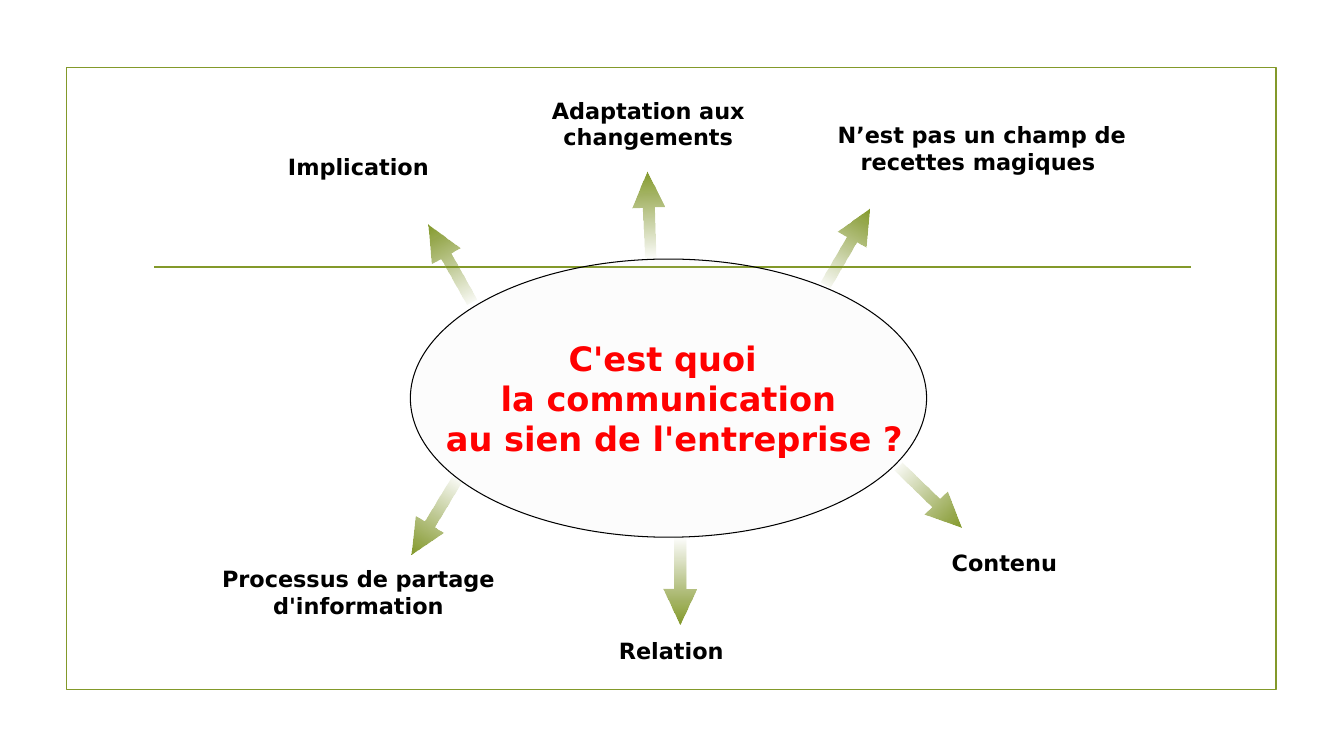
from dataclasses import dataclass

from lxml import etree
from pptx import Presentation
from pptx.dml.color import RGBColor
from pptx.enum import shapes, text
from pptx.oxml import ns
from pptx.util import Emu, Pt

PX = 9144  # 100 px to the inch


@dataclass(frozen=True)
class Theme:
    font: str = "DejaVu Sans"
    olive: str = "83992A"
    dark_olive: str = "7D9128"
    grey: str = "DADADA"
    black: str = "000000"
    red: str = "FF0000"
    title_size: int = 24
    label_size: int = 16
    rule_width: float = 1.25
    outline_width: float = 0.75


THEME = Theme()
CENTER, LEFT = text.PP_ALIGN.CENTER, text.PP_ALIGN.LEFT
ARROW_SIZE = (87, 32)

# left, top, rotation
ARROWS = [
    (797, 229, 299.6),
    (600, 198, 267.9),
    (403, 245, 240.9),
    (879, 477, 44.1),
    (631, 560, 90),
    (387, 497, 120.8),
]

# wording, left, top, width, height, alignment
LABELS = [
    ("Processus de partage d'information", 210, 556, 291, 64, CENTER),
    ("Relation", 604, 627, 220, 37, LEFT),
    ("Implication", 210, 147, 291, 37, CENTER),
    ("Adaptation aux changements", 533, 91, 220, 64, CENTER),
    ("Contenu", 934, 540, 149, 37, LEFT),
    (" N’est pas un champ de recettes magiques", 793, 115, 354, 64, CENTER),
]

TOPIC = ["C'est quoi ", "la communication", " au sien de l'entreprise ?"]


def px(*lengths):
    return [Emu(length * PX) for length in lengths]


def rgb(colour):
    return RGBColor.from_string(colour)


def set_alpha(colour_parent, percent):
    colour = colour_parent.find(".//" + ns.qn("a:srgbClr"))
    etree.SubElement(colour, ns.qn("a:alpha"), val=str(percent * 1000))


def set_line(line, colour, width):
    line.color.rgb = rgb(colour)
    line.width = Pt(width)


def add_span(para, wording, size, colour):
    span = para.add_run()
    span.text = wording
    span.font.name = THEME.font
    span.font.size = Pt(size)
    span.font.bold = True
    span.font.color.rgb = rgb(colour)


def add_preset(page, preset, left, top, width, height):
    shape = page.shapes.add_shape(preset, *px(left, top, width, height))
    shape.shadow.inherit = False
    return shape


def add_frame(page):
    frame = add_preset(page, shapes.MSO_SHAPE.RECTANGLE, 66, 67, 1200, 617)
    frame.fill.background()
    set_line(frame.line, THEME.olive, THEME.rule_width)


def add_rule(page):
    rule = page.shapes.add_connector(
        shapes.MSO_CONNECTOR.STRAIGHT, *px(153, 265, 1181, 265))
    set_line(rule.line, THEME.olive, THEME.rule_width)
    etree.SubElement(rule._element.spPr, ns.qn("a:effectLst"))


def add_topic(page):
    oval = add_preset(page, shapes.MSO_SHAPE.OVAL, 407, 257, 512, 276)
    oval.fill.solid()
    oval.fill.fore_color.rgb = rgb(THEME.grey)
    set_alpha(oval._element.spPr.find(ns.qn("a:solidFill")), 7)
    set_line(oval.line, THEME.black, THEME.outline_width)
    frame = oval.text_frame
    frame.word_wrap = False
    frame.vertical_anchor = text.MSO_ANCHOR.MIDDLE
    for index, wording in enumerate(TOPIC):
        para = frame.add_paragraph() if index else frame.paragraphs[0]
        para.alignment = CENTER
        add_span(para, wording, THEME.title_size, THEME.red)


def add_arrow(page, left, top, rotation):
    arrow = add_preset(page, shapes.MSO_SHAPE.RIGHT_ARROW, left, top, *ARROW_SIZE)
    arrow.rotation = rotation
    arrow.adjustments[0] = 0.352
    arrow.adjustments[1] = 1.11
    arrow.line.fill.background()
    # Fades in from the tail to the tip
    arrow.fill.gradient()
    arrow.fill.gradient_angle = 0
    tail, tip = arrow.fill.gradient_stops
    tail.color.rgb = rgb(THEME.dark_olive)
    tip.color.rgb = rgb(THEME.olive)
    set_alpha(arrow._element.spPr.find(ns.qn("a:gradFill")), 0)


def add_label(page, wording, left, top, width, height, alignment):
    box = page.shapes.add_textbox(*px(left, top, width, height))
    frame = box.text_frame
    frame.word_wrap = True
    frame.auto_size = text.MSO_AUTO_SIZE.SHAPE_TO_FIT_TEXT
    para = frame.paragraphs[0]
    para.alignment = alignment
    add_span(para, wording, THEME.label_size, THEME.black)


def main():
    deck = Presentation()
    deck.slide_width, deck.slide_height = px(1333, 750)
    page = deck.slides.add_slide(deck.slide_layouts[6])

    # Backdrop
    add_frame(page)
    add_rule(page)

    # Central question and the ideas around it
    add_topic(page)
    for arrow in ARROWS:
        add_arrow(page, *arrow)
    for label in LABELS:
        add_label(page, *label)

    deck.save("out.pptx")


if __name__ == "__main__":
    main()
